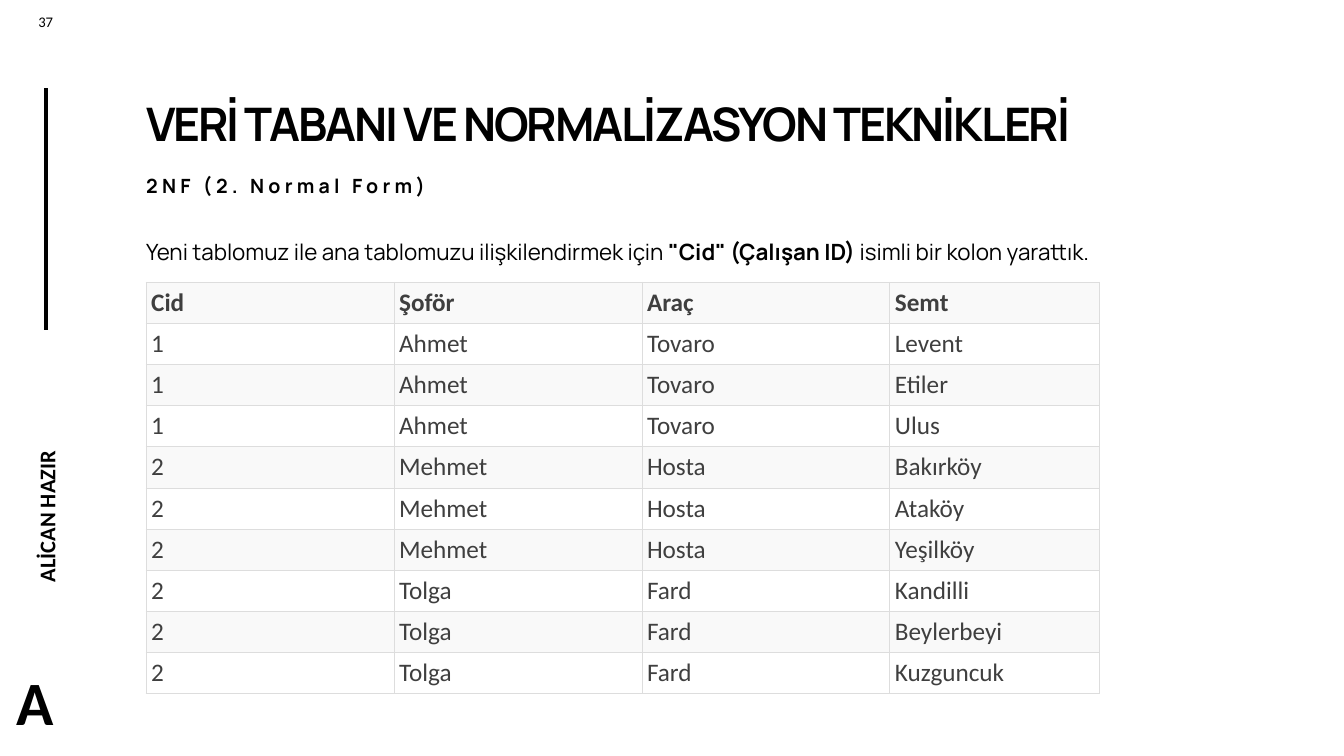
from lxml.etree import SubElement as Sub
from pptx import Presentation
from pptx.dml.color import RGBColor as Rgb
from pptx.enum.shapes import MSO_CONNECTOR as Link
from pptx.enum.text import MSO_ANCHOR as Anchor, MSO_AUTO_SIZE as Auto, PP_ALIGN as Align
from pptx.oxml.ns import qn
from pptx.util import Pt

TITLE = "VERİ TABANI VE NORMALİZASYON TEKNİKLERİ"
HEAD = "2NF (2. Normal Form)"
NOTE = [
    ("Yeni tablomuz ile ana tablomuzu ilişkilendirmek için ", False),
    ('"Cid" (Çalışan ID)', True),
    (" isimli bir kolon yarattık.", False),
]
COLS = ("Cid", "Şoför", "Araç", "Semt")
TRIPS = [
    ("1", "Ahmet", "Tovaro", ("Levent", "Etiler", "Ulus")),
    ("2", "Mehmet", "Hosta", ("Bakırköy", "Ataköy", "Yeşilköy")),
    ("2", "Tolga", "Fard", ("Kandilli", "Beylerbeyi", "Kuzguncuk")),
]
ROWS = [COLS] + [(cid, name, car, town) for cid, name, car, towns in TRIPS for town in towns]
WIDTHS = (177.1, 177.1, 177.1, 150)
LEFT, STEP = 104.4, 29.4
INK, GREY, EDGE = "000000", "3F3F3F", "DDDDDD"
BANDS = ("F9F9F9", "FFFFFF")


def paint(fill, tone):
    fill.solid()
    fill.fore_color.rgb = Rgb.from_string(tone)


def style(para, size, face, tone=INK, bold=False, track=0):
    for run in para.runs:
        font = run.font
        font.size, font.name, font.bold = Pt(size), face, bold
        paint(font.fill, tone)
        if track:
            run._r.get_or_add_rPr().set("spc", str(int(track * 100)))


def inset(item, left, top, right, low):
    item.margin_left, item.margin_top = Pt(left), Pt(top)
    item.margin_right, item.margin_bottom = Pt(right), Pt(low)


def place(shape, *box):
    shape.left, shape.top, shape.width, shape.height = map(Pt, box)


def fit(shape, box, anchor, space, gap):
    place(shape, *box)
    frame = shape.text_frame
    frame.word_wrap, frame.auto_size = True, Auto.NONE
    frame.vertical_anchor = anchor
    inset(frame, 0, 3.6, 7.2, 3.6)
    para = frame.paragraphs[0]
    para.alignment, para.line_spacing = Align.LEFT, space
    para.space_before = Pt(gap)
    props = para._p.get_or_add_pPr()
    props.set("marL", "0")
    props.set("indent", "0")
    Sub(props, qn("a:buNone"))
    return para


def label(slide, text, box, size, bold, pad, align=Align.LEFT):
    shape = slide.shapes.add_textbox(*map(Pt, box))
    frame = shape.text_frame
    frame.text, frame.word_wrap = text, True
    frame.vertical_anchor = Anchor.MIDDLE if bold else Anchor.TOP
    inset(frame, *pad)
    para = frame.paragraphs[0]
    para.alignment = align
    style(para, size, "Calibri", bold=bold)
    return shape


def border(cell):
    props = cell._tc.get_or_add_tcPr()
    for spot, side in enumerate(("lnL", "lnR", "lnT", "lnB")):
        line = Sub(props, qn("a:" + side), w=str(Pt(0.75)))
        Sub(Sub(line, qn("a:solidFill")), qn("a:srgbClr"), val=EDGE)
        props.insert(spot, line)


def side(slide):
    tight = (1.44,) * 4
    name = label(slide, "ALİCAN HAZIR", (-30.2, 342.7, 126.7, 22.3), 16, True, tight)
    name.rotation = 270
    rule = slide.shapes.add_connector(Link.STRAIGHT, Pt(33.1), Pt(235.4), Pt(33.1), Pt(62.6))
    paint(rule.line.fill, INK)
    rule.line.width = Pt(3)
    Sub(rule._element.spPr, qn("a:effectLst"))
    label(slide, "37", (12.2, 5.8, 41, 19.4), 10.5, False, (7.2, 3.6, 7.2, 3.6), Align.CENTER)
    label(slide, "A", (10.1, 472.3, 37.4, 56.2), 44, True, tight)


def words(slide):
    title, head, note = slide.placeholders
    title.text_frame.text = TITLE
    para = fit(title, (LEFT, 66.2, 783.4, 45.4), Anchor.BOTTOM, 0.9, 0)
    style(para, 33, "Manrope", bold=True, track=-1.5)
    head.text_frame.text = HEAD
    para = fit(head, (LEFT, 122.4, 670.3, 22.3), Anchor.TOP, 0.9, 10)
    style(para, 14, "Manrope", bold=True, track=3)
    para = fit(note, (LEFT, 157, 794.9, 44.6), Anchor.TOP, 1.5, 10)
    para.alignment = Align.JUSTIFY
    for text, _ in NOTE:
        para.add_run().text = text
    style(para, 16, "Manrope")
    for run, (_, bold) in zip(para.runs, NOTE):
        run.font.bold = bold


def grid(slide):
    box = (LEFT, 201.6, sum(WIDTHS), STEP * len(ROWS))
    table = slide.shapes.add_table(len(ROWS), len(COLS), *map(Pt, box)).table
    table.horz_banding = False
    for col, width in zip(table.columns, WIDTHS):
        col.width = Pt(width)
    for r, row in enumerate(ROWS):
        table.rows[r].height = Pt(STEP)
        for c, text in enumerate(row):
            cell = table.cell(r, c)
            cell.text = text
            inset(cell, 3.6, 3.6, 3.6, 3.6)
            style(cell.text_frame.paragraphs[0], 18, "Calibri", GREY, r == 0)
            paint(cell.fill, BANDS[r % 2])
            border(cell)


def main():
    deck = Presentation()
    deck.slide_width, deck.slide_height = Pt(960), Pt(540)
    slide = deck.slides.add_slide(deck.slide_layouts[3])
    paint(slide.background.fill, "FFFFFF")
    side(slide)
    words(slide)
    grid(slide)
    deck.save("out.pptx")


if __name__ == "__main__":
    main()
